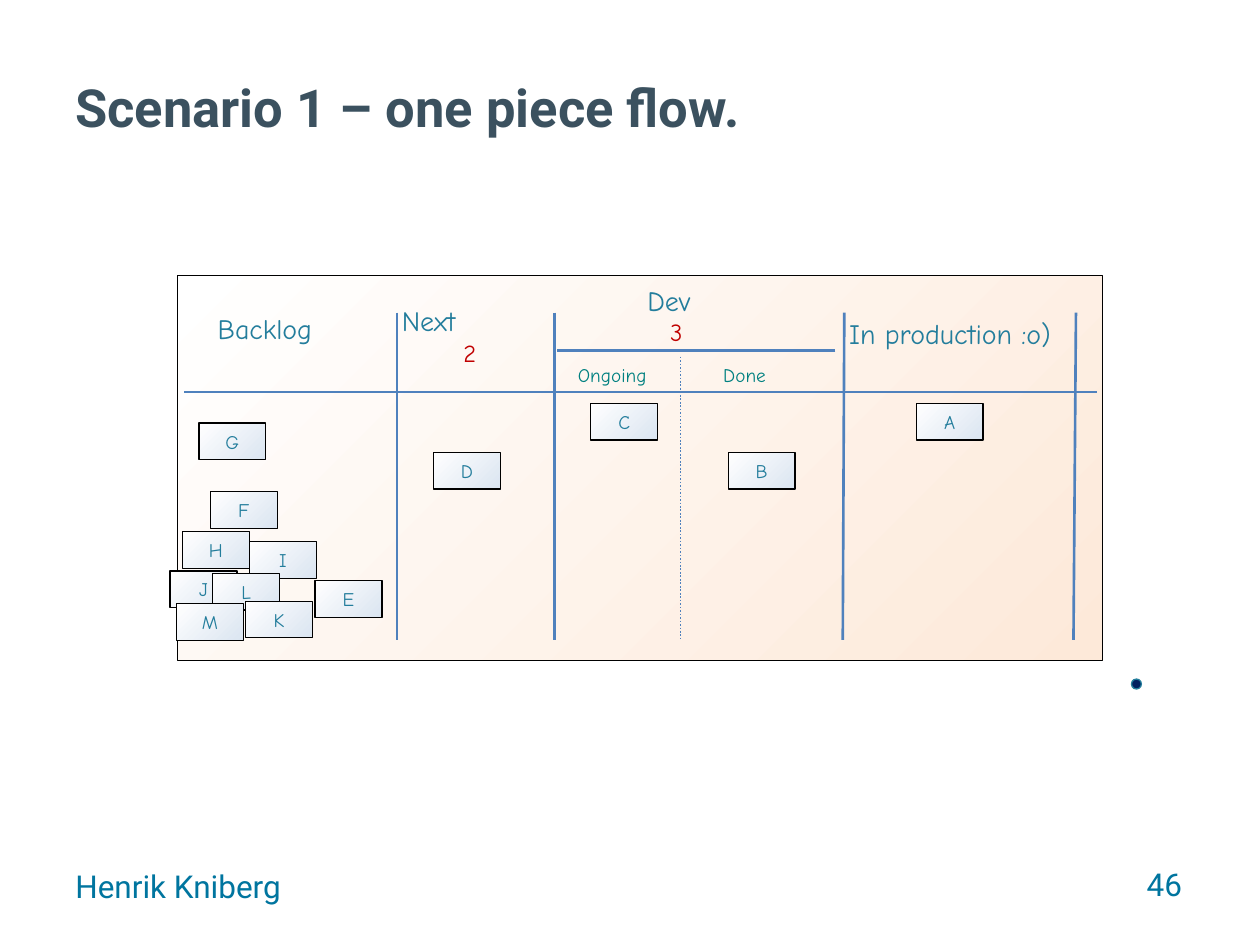
from lxml import etree
from pptx import Presentation
from pptx import util as u
from pptx.dml.color import RGBColor
from pptx.enum import dml, shapes, text

NS = "http://schemas.openxmlformats.org/drawingml/2006/main"


def color(code):
    return RGBColor.from_string(code)


class Board:
    SANS, HAND = "Roboto", "Comic Neue"
    INK, TEAL, RED = "237D9C", "008080", "C00000"
    RULE, EDGE = "4F81BD", "000000"
    CARD = (1.35, 0.74)

    def __init__(self, slide):
        self.shapes = slide.shapes
        self.into = self.shapes  # where new elements go

    def group(self):
        self.into = self.shapes.add_group_shape().shapes

    def loose(self):
        self.into = self.shapes

    def words(self, frame, line, size, tone, face, bold=False, align=None):
        par = frame.paragraphs[0]
        par.text = line
        par.alignment = align
        font = par.font
        font.name, font.size, font.bold = face, u.Pt(size), bold
        font.color.rgb = color(tone)

    def label(self, line, box, size, tone, face=HAND, **more):
        frame = self.into.add_textbox(*map(u.Cm, box)).text_frame
        frame.word_wrap = True
        self.words(frame, line, size, tone, face, **more)
        return frame

    def shape(self, kind, box, edge):
        form = self.into.add_shape(kind, *map(u.Cm, box))
        form.shadow.inherit = False
        form.line.color.rgb = color(edge)
        form.line.width = u.Pt(0.75)
        return form

    def panel(self, box, tint):
        form = self.shape(shapes.MSO_SHAPE.RECTANGLE, box, self.EDGE)
        form.fill.gradient()
        form.fill.gradient_angle = 315
        for stop, code in zip(form.fill.gradient_stops, ("FFFFFF", tint)):
            stop.color.rgb = color(code)
        return form

    def card(self, name, left, top):
        frame = self.panel((left, top, *self.CARD), "DBE5F1").text_frame
        frame.margin_left = frame.margin_right = 0
        frame.margin_top = frame.margin_bottom = 0
        frame.vertical_anchor = text.MSO_ANCHOR.MIDDLE
        self.words(frame, name, 11, self.INK, self.HAND,
                   align=text.PP_ALIGN.CENTER)

    def dot(self, left, top, size):
        form = self.shape(shapes.MSO_SHAPE.OVAL, (left, top, size, size), self.INK)
        form.fill.solid()
        form.fill.fore_color.rgb = color("002060")

    def rule(self, *ends, width=1.5, dash=None):
        line = self.into.add_connector(shapes.MSO_CONNECTOR.STRAIGHT,
                                       *map(u.Cm, ends))
        line.line.color.rgb = color(self.RULE)
        line.line.width = u.Pt(width)
        if dash:
            line.line.dash_style = dash
        etree.SubElement(line._element.spPr, f"{{{NS}}}effectLst")


def main():
    deck = Presentation()
    deck.slide_width, deck.slide_height = u.Cm(25.4), u.Cm(19.05)
    board = Board(deck.slides.add_slide(deck.slide_layouts[6]))

    # Board with its column lines
    board.group()
    board.panel((3.58, 5.56, 18.64, 7.75), "FDE9D9")
    for top, foot in ((8, 8), (11.18, 11.18), (17.02, 16.99), (21.69, 21.64)):
        board.rule(top, 6.3, foot, 12.9)
    board.rule(13.72, 7.19, 13.72, 12.88, width=1,
               dash=dml.MSO_LINE.ROUND_DOT)
    board.rule(3.71, 7.9, 22.12, 7.9)
    board.rule(16.84, 7.06, 11.23, 7.06)

    # Column heads, stages and limits
    for head, box in (("Backlog", (4.14, 6.15, 3.73, 1.24)),
                      ("Next", (7.85, 5.99, 3.73, 0.94)),
                      ("Dev", (12.8, 5.59, 2.82, 1.07)),
                      ("In production :o)", (16.87, 6.25, 5.16, 2.01))):
        board.label(head, box, 16, board.INK)
    for stage, box in (("Ongoing", (11.4, 7.19, 3.66, 1.14)),
                       ("Done", (14.33, 7.19, 3.12, 0.94))):
        board.label(stage, box, 11, board.TEAL)
    for limit, left, top in (("2", 9.09, 6.68), ("3", 13.26, 6.27)):
        board.label(limit, (left, top, 0.79, 1.07), 14, board.RED)

    # Title and footer
    board.loose()
    title = board.label("Scenario 1 – one piece flow.", (1.27, 1.25, 22.86, 1.8),
                        30, "3B515F", board.SANS, bold=True)
    title.vertical_anchor = text.MSO_ANCHOR.MIDDLE
    board.label("Henrik Kniberg", (1.27, 17.35, 8.05, 1.32), 18, "00759F",
                board.SANS)
    board.label("46", (18.16, 17.32, 5.92, 1.32), 18, "00759F", board.SANS,
                align=text.PP_ALIGN.RIGHT)

    # Cards, from back to front
    for name, left, top in (
            ("B", 14.68, 9.12), ("C", 11.91, 8.13), ("A", 18.47, 8.13),
            ("D", 8.74, 9.12), ("E", 6.35, 11.71), ("F", 4.24, 9.91),
            ("G", 4.01, 8.53), ("H", 3.68, 10.72), ("I", 5.03, 10.92),
            ("J", 3.43, 11.51), ("L", 4.29, 11.56), ("K", 4.95, 12.12),
            ("M", 3.56, 12.17)):
        board.card(name, left, top)
    board.dot(22.81, 13.69, 0.2)

    deck.save("out.pptx")


if __name__ == "__main__":
    main()
